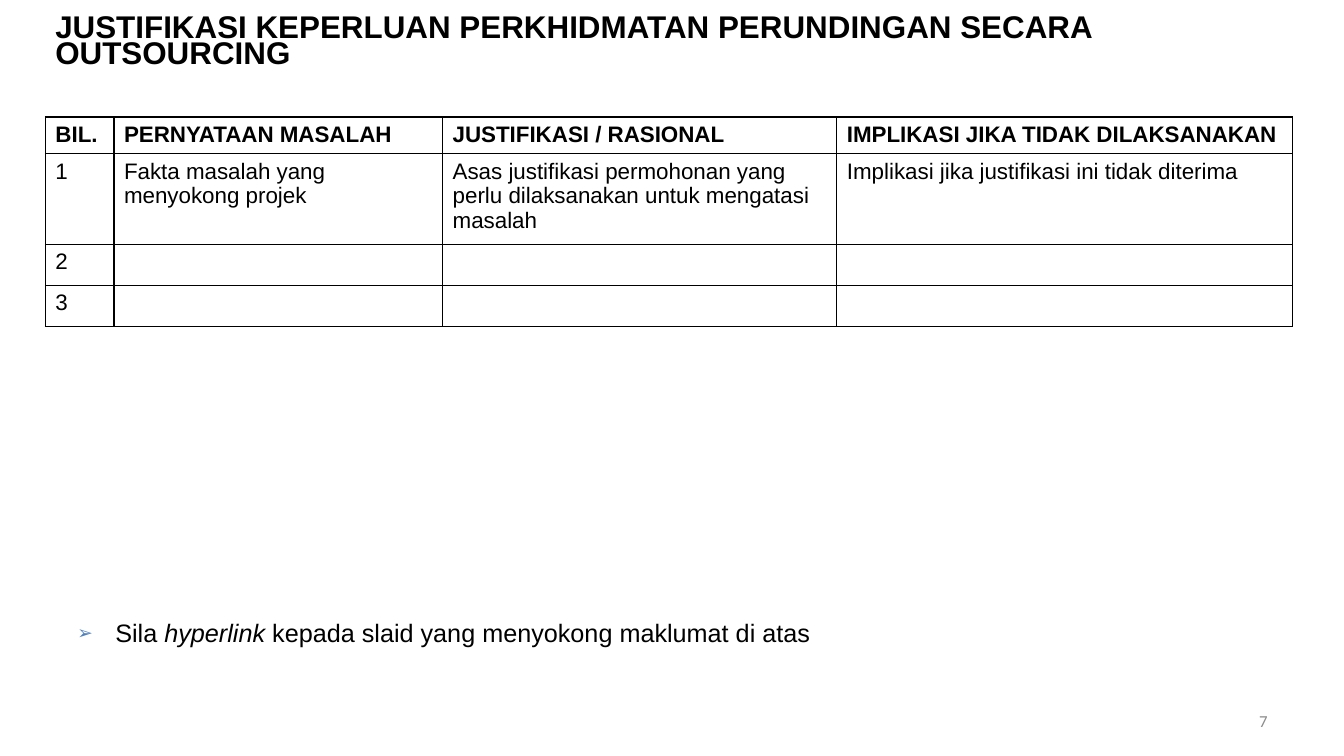
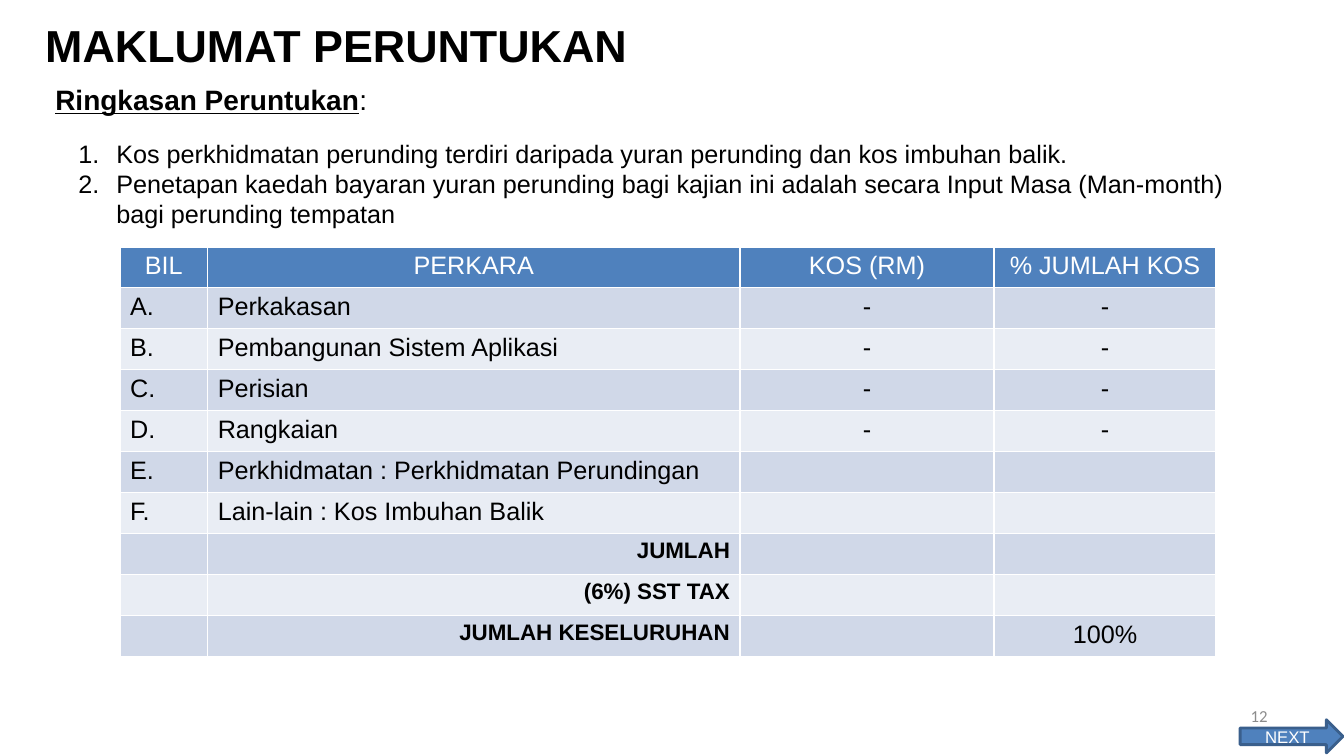
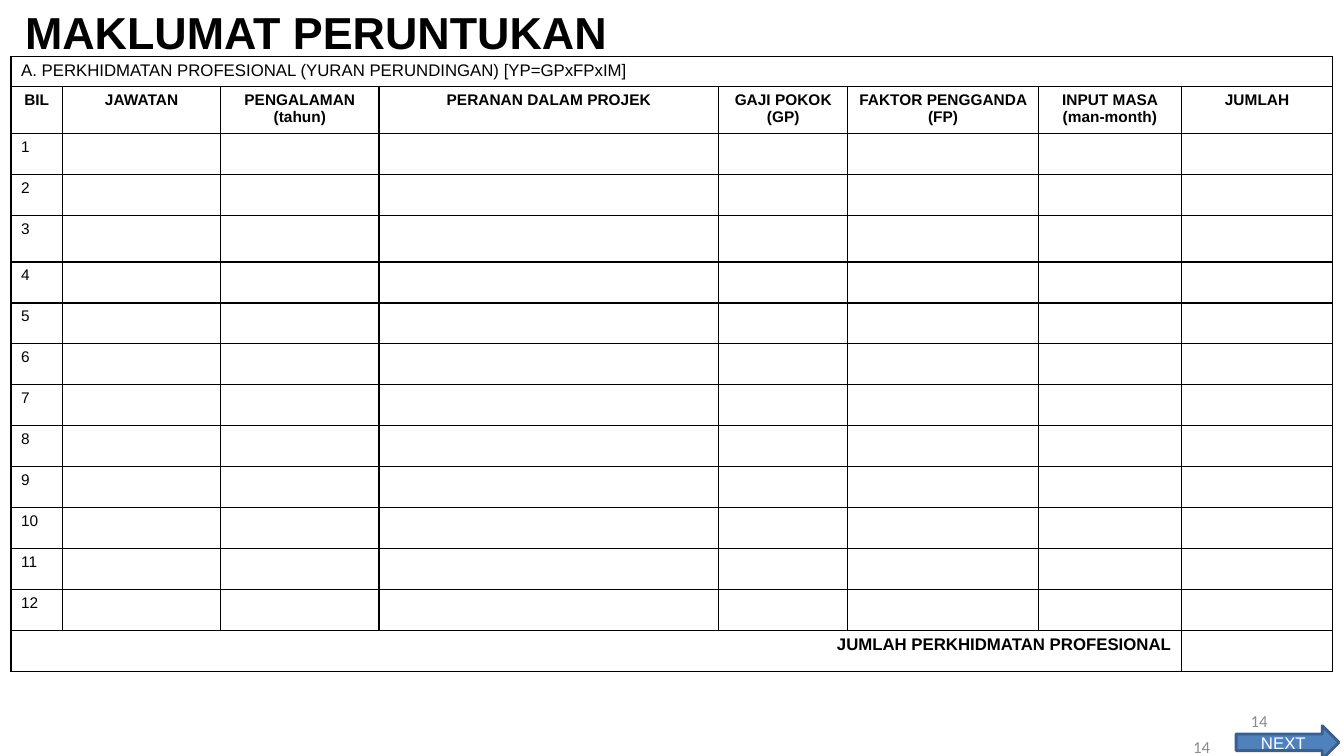
from lxml.etree import SubElement
from pptx import Presentation
from pptx.dml.color import RGBColor
from pptx.enum.shapes import MSO_SHAPE as Shape
from pptx.enum.text import MSO_ANCHOR as Anchor, PP_ALIGN as Align
from pptx.oxml.ns import qn
from pptx.util import Inches, Pt

THEME = {
    "black": "000000", "white": "FFFFFF", "blue": "4F81BD",
    "arrow_line": "3A5F8C", "bands": ("D0D8E8", "E9EDF4"),
    "font": "Arial", "hang": 3 / 8, "space_before": 20, "row": 4.06 / 10,
    "styles": {
        "long_title": {"size": 22.4, "bold": True, "line_spacing": 0.7, "anchor": Anchor.MIDDLE},
        "title": {"size": 32, "bold": True, "hang": True, "space": True},
        "subtitle": {"size": 20, "align": Align.JUSTIFY, "space": True},
        "arrow_note": {"size": 18, "hang": True, "space": True, "bullet": "➢"},
        "numbered": {"size": 18, "hang": True, "bullet": "number"},
        "page_number": {"size": 12, "name": "Calibri", "color": "8C8C8C",
                        "align": Align.RIGHT, "anchor": Anchor.MIDDLE},
        "next": {"size": 12, "color": "FFFFFF", "align": Align.CENTER, "anchor": Anchor.MIDDLE},
        "head_16": {"size": 16, "bold": True},
        "cell_16": {"size": 16},
        "total_16": {"size": 16, "bold": True, "align": Align.RIGHT},
        "head_18": {"size": 18, "color": "FFFFFF", "align": Align.CENTER},
        "cell_18": {"size": 18},
        "value_18": {"size": 18, "align": Align.CENTER},
        "section_12": {"size": 12},
        "total_12": {"size": 12, "bold": True, "align": Align.RIGHT},
        "head_11": {"size": 11, "bold": True, "align": Align.CENTER},
        "cell_11": {"size": 11},
    },
}


def write(frame, style_name, *paragraphs):
    """Write paragraphs, each a string or a list of (text, font overrides)."""
    style = THEME["styles"][style_name]
    frame.word_wrap = True
    if "anchor" in style:
        frame.vertical_anchor = style["anchor"]
    for index, content in enumerate(paragraphs):
        para = frame.add_paragraph() if index else frame.paragraphs[0]
        para.alignment = style.get("align", Align.LEFT)
        if "line_spacing" in style:
            para.line_spacing = style["line_spacing"]
        props = para._p.get_or_add_pPr()
        if style.get("hang"):
            props.set("marL", str(Inches(THEME["hang"])))
            props.set("indent", str(-Inches(THEME["hang"])))
        if style.get("space"):
            before = SubElement(props, qn("a:spcBef"))
            SubElement(before, qn("a:spcPct"), val=str(THEME["space_before"] * 1000))
        bullet = style.get("bullet")
        if bullet == "number":
            SubElement(props, qn("a:buAutoNum"), type="arabicPeriod")
        elif bullet:
            SubElement(SubElement(props, qn("a:buClr")), qn("a:srgbClr"), val=THEME["blue"])
            SubElement(props, qn("a:buSzPct"), val="73000")
            SubElement(props, qn("a:buFont"), typeface=THEME["font"])
            SubElement(props, qn("a:buChar"), char=bullet)
        for text, overrides in [(content, {})] if isinstance(content, str) else content:
            span = para.add_run()
            span.text = text
            span.font.color.rgb = RGBColor.from_string(style.get("color", THEME["black"]))
            formats = {"name": THEME["font"], "bold": False, **style, **overrides}
            formats["size"] = Pt(formats["size"])
            for name in ("name", "size", "bold", "italic", "underline"):
                if name in formats:
                    setattr(span.font, name, formats[name])


def add_grid(page, left, top, widths, heights, rows, line, header=None, bands=None):
    """Add a ruled table; each row lists (style, text) for its leading cells."""
    table = page.shapes.add_table(
        len(heights), len(widths), Inches(left), Inches(top),
        Inches(sum(widths)), Inches(sum(heights))).table
    table.first_row = table.horz_banding = False
    for column, width in zip(table.columns, widths):
        column.width = Inches(width)
    for index, (row, height, entries) in enumerate(zip(table.rows, heights, rows)):
        row.height = Inches(height)
        for cell in row.cells:
            props = cell._tc.get_or_add_tcPr()
            for side in ("a:lnL", "a:lnR", "a:lnT", "a:lnB"):
                edge = SubElement(props, qn(side), w=str(Pt(1)))
                SubElement(SubElement(edge, qn("a:solidFill")), qn("a:srgbClr"), val=line)
            if bands:
                color = bands[(index - 1) % len(bands)] if index else header
                cell.fill.solid()
                cell.fill.fore_color.rgb = RGBColor.from_string(color)
            else:
                cell.fill.background()
        for cell, (style, text) in zip(row.cells, entries):
            if text:
                write(cell.text_frame, style, text)
    return table


deck = Presentation()
deck.slide_width, deck.slide_height = Inches(13.33), Inches(7.5)
reasons, summary, fees = [deck.slides.add_slide(deck.slide_layouts[6]) for _ in range(3)]

# Text on all pages
texts = [
    (reasons, (0.45, 0.12, 11.64, 0.63), "long_title",
     ["JUSTIFIKASI KEPERLUAN PERKHIDMATAN PERUNDINGAN SECARA OUTSOURCING"]),
    (reasons, (0.67, 6.08, 11.03, 0.46), "arrow_note",
     [[("Sila ", {}), ("hyperlink ", {"italic": True}),
       ("kepada slaid yang menyokong maklumat di atas", {})]]),
    (reasons, (9.56, 6.95, 3.11, 0.4), "page_number", ["7"]),
    (summary, (0.35, 0.13, 6.83, 0.81), "title", ["MAKLUMAT PERUNTUKAN"]),
    (summary, (0.45, 0.77, 6.26, 0.44), "subtitle",
     [[("Ringkasan Peruntukan", {"bold": True, "underline": True}), (":", {})]]),
    (summary, (0.68, 1.32, 11.89, 1.01), "numbered",
     ["Kos perkhidmatan perunding terdiri daripada yuran perunding dan kos imbuhan balik.",
      "Penetapan kaedah bayaran yuran perunding bagi kajian ini adalah secara "
      "Input Masa (Man-month) bagi perunding tempatan"]),
    (summary, (9.56, 6.9, 3.11, 0.4), "page_number", ["12"]),
    (fees, (0.15, 0, 6.83, 0.81), "title", ["MAKLUMAT PERUNTUKAN"]),
    (fees, (9.56, 6.95, 3.11, 0.4), "page_number", ["14"]),
    (fees, (8.99, 7.21, 3.11, 0.4), "page_number", ["14"]),
]
for page, place, style, paragraphs in texts:
    box = page.shapes.add_textbox(*map(Inches, place))
    write(box.text_frame, style, *paragraphs)

# Justification table; the heading row grows to fit its text
reason_rows = [
    [("head_16", text) for text in (
        "BIL.", "PERNYATAAN MASALAH", "JUSTIFIKASI / RASIONAL",
        "IMPLIKASI JIKA TIDAK DILAKSANAKAN")],
    [("cell_16", text) for text in (
        "1", "Fakta masalah yang menyokong projek",
        "Asas justifikasi permohonan yang perlu dilaksanakan untuk mengatasi masalah",
        "Implikasi jika justifikasi ini tidak diterima")],
    [("cell_16", "2")],
    [("cell_16", "3")],
]
add_grid(reasons, 0.45, 1.16, [0.68, 3.26, 3.91, 4.52], [0] + [THEME["row"]] * 3,
         reason_rows, THEME["black"])

# Budget summary table
items = [
    ("Perkakasan", "-"), ("Pembangunan Sistem Aplikasi", "-"), ("Perisian", "-"),
    ("Rangkaian", "-"), ("Perkhidmatan : Perkhidmatan Perundingan", ""),
    ("Lain-lain : Kos Imbuhan Balik", ""),
]
totals = [("JUMLAH", ""), ("(6%) SST TAX", ""), ("JUMLAH KESELURUHAN", "100%")]
summary_rows = [[("head_18", text) for text in ("BIL", "PERKARA", "KOS (RM)", "% JUMLAH KOS")]]
for letter, (item, value) in zip("ABCDEF", items):
    summary_rows.append([("cell_18", letter + "."), ("cell_18", item),
                         ("value_18", value), ("value_18", value)])
for label, share in totals:
    summary_rows.append([("cell_18", ""), ("total_16", label),
                         ("value_18", ""), ("value_18", share)])
add_grid(summary, 1.19, 2.45, [0.87, 5.28, 2.52, 2.2], [THEME["row"]] * len(summary_rows),
         summary_rows, THEME["white"], THEME["blue"], THEME["bands"])

# Professional fees table
fee_rows = [
    [("section_12", "A. PERKHIDMATAN PROFESIONAL (YURAN PERUNDINGAN) [YP=GPxFPxIM]")],
    [("head_11", text) for text in (
        "BIL", "JAWATAN", "PENGALAMAN (tahun)", "PERANAN DALAM PROJEK", "GAJI POKOK (GP)",
        "FAKTOR PENGGANDA (FP)", "INPUT MASA (man-month)", "JUMLAH")],
    *[[("cell_11", str(number))] for number in range(1, 13)],
    [("total_12", "JUMLAH PERKHIDMATAN PROFESIONAL")],
]
fee_heights = [0.14] + [THEME["row"]] * 3 + [0.46] + [THEME["row"]] * 10
fee_table = add_grid(fees, 0.11, 0.56, [0.51, 1.57, 1.57, 3.37, 1.28, 1.89, 1.42, 1.5],
                     fee_heights, fee_rows, THEME["black"])
last_row = len(fee_rows) - 1
fee_table.cell(0, 0).merge(fee_table.cell(0, 7))
fee_table.cell(last_row, 0).merge(fee_table.cell(last_row, 6))

# Arrows to the next page
for page, left, top in ((summary, 12.3, 7.14), (fees, 12.26, 7.2)):
    arrow = page.shapes.add_shape(
        Shape.RIGHT_ARROW, Inches(left), Inches(top), Inches(1.02), Inches(0.33))
    arrow.shadow.inherit = False
    arrow.fill.solid()
    arrow.fill.fore_color.rgb = RGBColor.from_string(THEME["blue"])
    arrow.line.color.rgb = RGBColor.from_string(THEME["arrow_line"])
    arrow.line.width = Pt(2)
    write(arrow.text_frame, "next", "NEXT")

deck.save("out.pptx")
